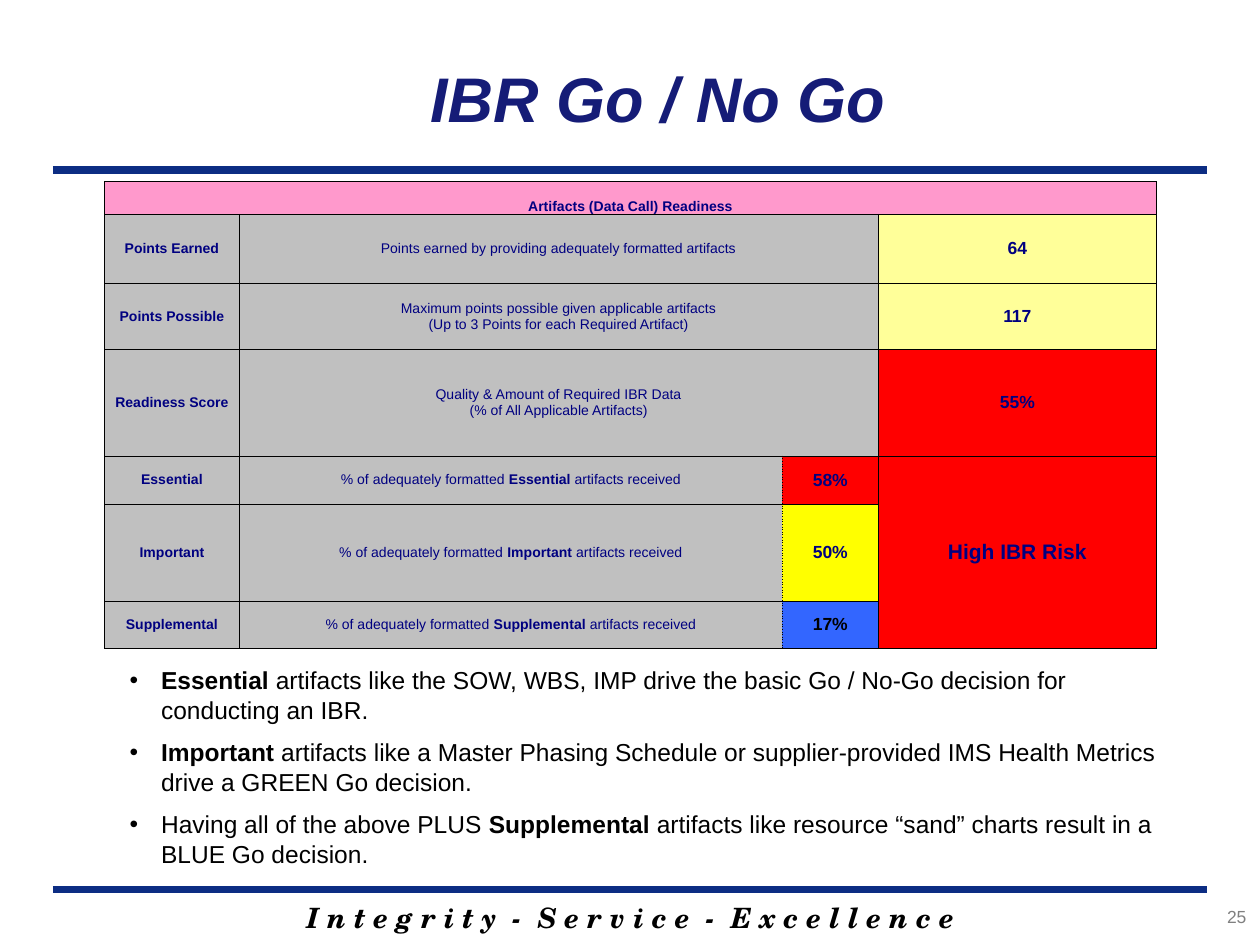
"""Build the IBR Go / No Go readiness slide."""
from typing import NamedTuple

from lxml.etree import SubElement
from pptx import Presentation
from pptx.dml.color import RGBColor
from pptx.enum.shapes import MSO_CONNECTOR
from pptx.enum.text import MSO_ANCHOR, PP_ALIGN
from pptx.oxml import parse_xml
from pptx.oxml.ns import nsdecls, qn
from pptx.util import Inches, Pt

BLACK = RGBColor(0x00, 0x00, 0x00)
NAVY = RGBColor(0x00, 0x00, 0x80)
TITLE_BLUE = RGBColor(0x15, 0x1C, 0x77)
RULE_BLUE = RGBColor(0x0C, 0x2D, 0x83)
PAGE_GRAY = RGBColor(0x80, 0x80, 0x80)
PINK = RGBColor(0xFF, 0x99, 0xCC)
SILVER = RGBColor(0xC0, 0xC0, 0xC0)
PALE_YELLOW = RGBColor(0xFF, 0xFF, 0x99)
RED = RGBColor(0xFF, 0x00, 0x00)
YELLOW = RGBColor(0xFF, 0xFF, 0x00)
BLUE = RGBColor(0x33, 0x66, 0xFF)

COLUMN_WIDTHS = (1.07, 4.31, 0.76, 2.21)
ROW_HEIGHTS = (0.26, 0.55, 0.52, 0.85, 0.38, 0.77, 0.38)


class Score(NamedTuple):
    label: str
    description: str
    value: str
    fill: RGBColor
    color: RGBColor = NAVY


TOTALS = (
    Score("Points Earned", "Points earned by providing adequately formatted artifacts",
          "64", PALE_YELLOW),
    Score("Points Possible", "Maximum points possible given applicable artifacts\n"
          "(Up to 3 Points for each Required Artifact)", "117", PALE_YELLOW),
    Score("Readiness Score", "Quality & Amount of Required IBR Data\n"
          "(% of All Applicable Artifacts)", "55%", RED),
)
CATEGORIES = tuple(
    Score(label, f"% of adequately formatted **{label}** artifacts received", value, fill, color)
    for label, value, fill, color in (
        ("Essential", "58%", RED, NAVY),
        ("Important", "50%", YELLOW, NAVY),
        ("Supplemental", "17%", BLUE, BLACK),
    )
)
BULLETS = (
    "**Essential** artifacts like the SOW, WBS, IMP drive the basic Go / No-Go decision "
    "for conducting an IBR.",
    "**Important** artifacts like a Master Phasing Schedule or supplier-provided IMS Health "
    "Metrics drive a GREEN Go decision.",
    "Having all of the above PLUS **Supplemental** artifacts like resource “sand” charts "
    "result in a BLUE Go decision.",
)


def write(paragraph, text: str, *, size: float, color: RGBColor = BLACK, bold: bool = False,
          italic: bool = False, font: str = "Arial", align=PP_ALIGN.LEFT) -> None:
    """Write text into a paragraph, with **marked** parts in bold."""
    paragraph.alignment = align
    for line_number, line in enumerate(text.split("\n")):
        if line_number:
            paragraph.add_line_break()
        for index, part in enumerate(line.split("**")):
            if part:
                run = paragraph.add_run()
                run.text = part
                run.font.name = font
                run.font.size = Pt(size)
                run.font.color.rgb = color
                run.font.bold = bold or index % 2 == 1
                run.font.italic = italic


def add_text_box(slide, left: float, top: float, width: float, height: float):
    """Add a wrapping text box and return its text frame."""
    shape = slide.shapes.add_textbox(Inches(left), Inches(top), Inches(width), Inches(height))
    shape.text_frame.word_wrap = True
    return shape.text_frame


def add_rule(slide, top: float) -> None:
    """Draw a thick horizontal rule across the slide."""
    rule = slide.shapes.add_connector(
        MSO_CONNECTOR.STRAIGHT, Inches(0.42), Inches(top), Inches(9.58), Inches(top))
    rule.line.color.rgb = RULE_BLUE
    rule.line.width = Pt(4.5)
    SubElement(rule._element.spPr, qn("a:effectLst"))


def set_borders(cell, dotted_side: str) -> None:
    """Give a cell thin black borders, with at most one dotted side."""
    properties = cell._tc.get_or_add_tcPr()
    for index, side in enumerate("LRTB"):
        dash = "sysDot" if side == dotted_side else "solid"
        properties.insert(index, parse_xml(
            f'<a:ln{side} {nsdecls("a")} w="{Pt(0.5)}"><a:solidFill><a:srgbClr val="{BLACK}"/>'
            f'</a:solidFill><a:prstDash val="{dash}"/></a:ln{side}>'))


def fill_cell(cell, text: str, fill: RGBColor, *, size: float = 8, color: RGBColor = NAVY,
              bold: bool = True, anchor=MSO_ANCHOR.MIDDLE) -> None:
    """Colour a cell and write its centred text."""
    cell.fill.solid()
    cell.fill.fore_color.rgb = fill
    cell.vertical_anchor = anchor
    write(cell.text_frame.paragraphs[0], text, size=size, color=color, bold=bold,
          align=PP_ALIGN.CENTER)


def add_readiness_table(slide) -> None:
    """Add the artifact readiness table."""
    table = slide.shapes.add_table(
        len(ROW_HEIGHTS), len(COLUMN_WIDTHS), Inches(0.83), Inches(1.44),
        Inches(sum(COLUMN_WIDTHS)), Inches(sum(ROW_HEIGHTS))).table
    table.first_row = table.horz_banding = False
    for column, width in zip(table.columns, COLUMN_WIDTHS):
        column.width = Inches(width)
    for row_index, (row, height) in enumerate(zip(table.rows, ROW_HEIGHTS)):
        row.height = Inches(height)
        for column_index, cell in enumerate(row.cells):
            cell.margin_left = cell.margin_right = cell.margin_top = cell.margin_bottom = 0
            cell.text_frame.paragraphs[0].font.size = Pt(8)
            dotted_side = {1: "R", 2: "L"}.get(column_index, "") if row_index > len(TOTALS) else ""
            set_borders(cell, dotted_side)

    table.cell(0, 0).merge(table.cell(0, 3))
    fill_cell(table.cell(0, 0), "Artifacts (Data Call) Readiness", PINK, anchor=MSO_ANCHOR.BOTTOM)
    for row_index, score in enumerate(TOTALS + CATEGORIES, start=1):
        is_total = row_index <= len(TOTALS)
        if is_total:
            table.cell(row_index, 1).merge(table.cell(row_index, 2))
        fill_cell(table.cell(row_index, 0), score.label, SILVER)
        fill_cell(table.cell(row_index, 1), score.description, SILVER, bold=False)
        fill_cell(table.cell(row_index, 3 if is_total else 2), score.value, score.fill,
                  size=10, color=score.color)
    table.cell(4, 3).merge(table.cell(6, 3))
    fill_cell(table.cell(4, 3), "High IBR Risk", RED, size=12)


def add_bullets(slide) -> None:
    """Add the bulleted explanation of the categories."""
    frame = add_text_box(slide, 0.93, 5.23, 8.51, 1.75)
    for index, text in enumerate(BULLETS):
        paragraph = frame.add_paragraph() if index else frame.paragraphs[0]
        properties = paragraph._p.get_or_add_pPr()
        properties.set("marL", str(Inches(0.25)))
        properties.set("indent", str(-Inches(0.25)))
        SubElement(properties, qn("a:buFont"), typeface="Arial")
        SubElement(properties, qn("a:buChar"), char="•")
        if index:
            paragraph.space_before = Pt(7.5)
        write(paragraph, text, size=14)


def main() -> None:
    """Build and save the slide."""
    presentation = Presentation()
    presentation.slide_width, presentation.slide_height = Inches(10), Inches(7.5)
    slide = presentation.slides.add_slide(presentation.slide_layouts[5])

    title = slide.shapes.title
    title.left, title.top, title.width, title.height = (
        Inches(2.58), Inches(0.15), Inches(5.28), Inches(1.25))
    title.text_frame.vertical_anchor = MSO_ANCHOR.MIDDLE
    write(title.text_frame.paragraphs[0], "IBR Go / No Go", size=36, color=TITLE_BLUE,
          bold=True, italic=True, align=PP_ALIGN.CENTER)

    for top in (1.35, 7.06):
        add_rule(slide, top)
    add_readiness_table(slide)
    add_bullets(slide)

    motto = add_text_box(slide, 1.42, 7.1, 7.17, 0.37)
    write(motto.paragraphs[0], "I n t e g r i t y  -  S e r v i c e  -  E x c e l l e n c e",
          size=16, bold=True, italic=True, font="TeX Gyre Schola", align=PP_ALIGN.CENTER)
    page_number = add_text_box(slide, 8.74, 7.14, 1.25, 0.33)
    write(page_number.paragraphs[0], "25", size=10, color=PAGE_GRAY, align=PP_ALIGN.RIGHT)

    presentation.save("out.pptx")


if __name__ == "__main__":
    main()
